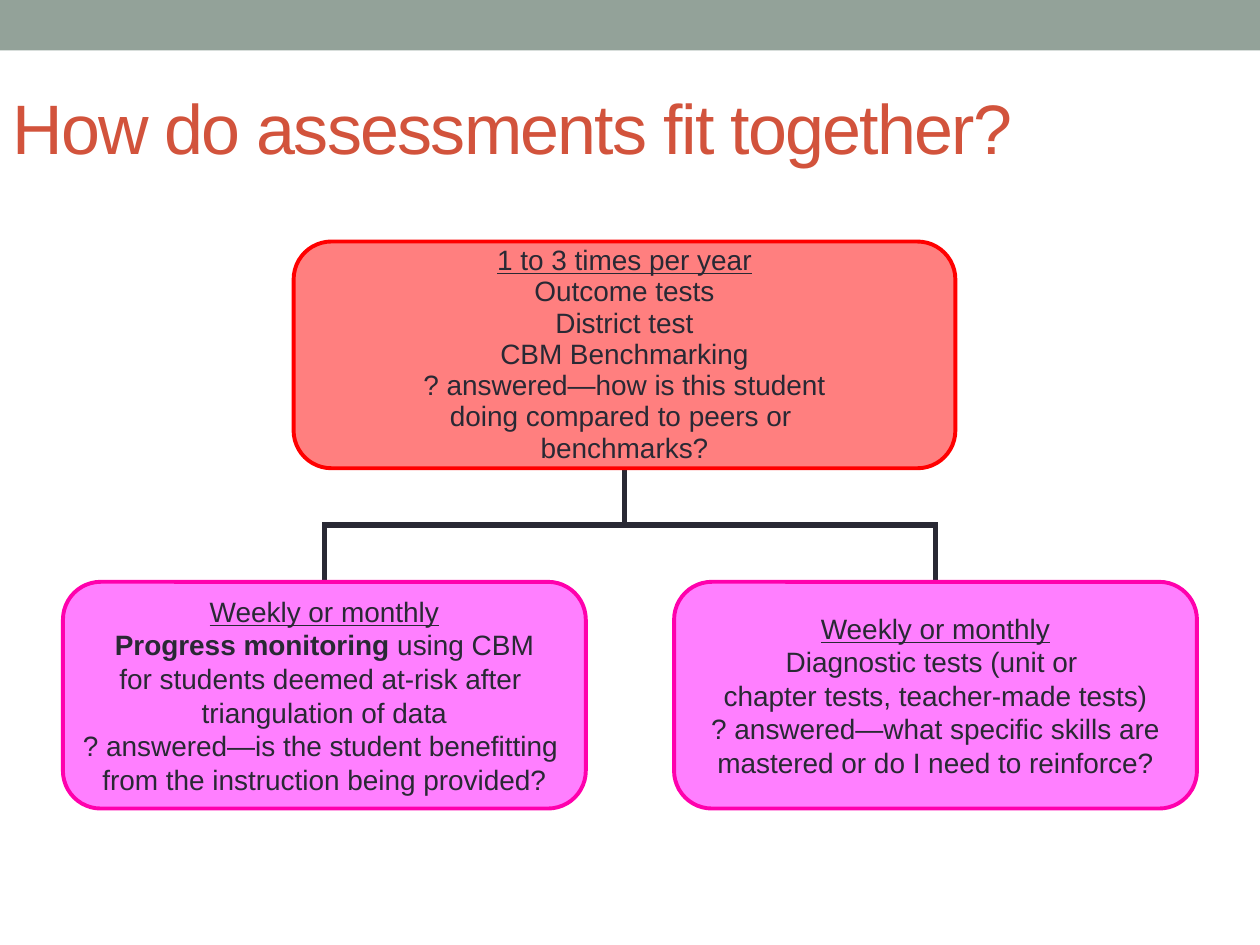
from dataclasses import dataclass

from lxml import etree
from pptx import Presentation
from pptx import util as u
from pptx.dml import color
from pptx.enum import shapes, text
from pptx.oxml import ns


@dataclass(frozen=True)
class Theme:
    font: str = "Arial"
    band: str = "93A299"
    title: str = "D2533C"
    ink: str = "292934"
    yearly_fill: str = "FF0000"
    yearly_line: str = "FF0000"
    monthly_fill: str = "FF00FF"
    monthly_line: str = "FF00AD"
    title_size: int = 40
    body_size: int = 16
    outline: float = 2.25
    connector: float = 3
    tight_spacing: float = 0.93


@dataclass(frozen=True)
class Box:
    left: float
    top: float
    width: float
    height: float

    @property
    def center(self):
        return self.left + self.width / 2

    @property
    def bottom(self):
        return self.top + self.height

    def lengths(self):
        return [u.Cm(v) for v in (self.left, self.top, self.width, self.height)]


THEME = Theme()


def rgb(value):
    return color.RGBColor.from_string(value)


def add_run(paragraph, words, size, ink, bold=False, underline=False, spacing=None):
    run = paragraph.add_run()
    run.text = words
    font = run.font
    font.name, font.size = THEME.font, u.Pt(size)
    font.bold, font.underline = bold, underline
    font.color.rgb = rgb(ink)
    if spacing is not None:
        run._r.get_or_add_rPr().set("spc", str(spacing * 100))


def add_filled_shape(slide, kind, box, fill, line=None, opacity=None):
    shape = slide.shapes.add_shape(kind, *box.lengths())
    shape.shadow.inherit = False
    shape.fill.solid()
    shape.fill.fore_color.rgb = rgb(fill)
    if opacity is not None:
        fill_color = shape._element.spPr.find(".//" + ns.qn("a:srgbClr"))
        etree.SubElement(fill_color, ns.qn("a:alpha")).set("val", str(opacity * 1000))
    if line:
        shape.line.color.rgb = rgb(line)
        shape.line.width = u.Pt(THEME.outline)
    else:
        shape.line.fill.background()
    return shape


def add_title(slide, box, words):
    frame = slide.shapes.add_textbox(*box.lengths()).text_frame
    frame.word_wrap = True
    frame.vertical_anchor = text.MSO_ANCHOR.MIDDLE
    add_run(frame.paragraphs[0], words, THEME.title_size, THEME.title, spacing=-1)


def add_assessment(slide, box, heading, lines, fill, line, line_spacing=None):
    shape = add_filled_shape(
        slide, shapes.MSO_SHAPE.ROUNDED_RECTANGLE, box, fill, line, opacity=50
    )
    frame = shape.text_frame
    frame.word_wrap = False
    frame.vertical_anchor = text.MSO_ANCHOR.MIDDLE
    frame.margin_left = frame.margin_right = frame.margin_top = frame.margin_bottom = 0
    rows = [[(heading, {"underline": True})]]
    rows += [[(row, {})] if isinstance(row, str) else row for row in lines]
    for index, row in enumerate(rows):
        paragraph = frame.add_paragraph() if index else frame.paragraphs[0]
        paragraph.alignment = text.PP_ALIGN.CENTER
        paragraph.line_spacing = line_spacing
        for words, style in row:
            add_run(paragraph, words, THEME.body_size, THEME.ink, **style)


def add_branch(slide, parent, child):
    middle_x = (parent.center + child.center) / 2
    middle_y = (parent.bottom + child.top) / 2
    half_rise = (child.top - parent.bottom) / 2
    half_run = (child.center - parent.center) / 2
    connector = slide.shapes.add_connector(
        shapes.MSO_CONNECTOR.ELBOW,
        u.Cm(middle_x - half_rise), u.Cm(middle_y + half_run),
        u.Cm(middle_x + half_rise), u.Cm(middle_y - half_run),
    )
    connector.line.color.rgb = rgb(THEME.ink)
    connector.line.width = u.Pt(THEME.connector)
    properties = connector._element.spPr
    properties.find(ns.qn("a:xfrm")).set("rot", str(270 * 60000))
    outline = properties.find(ns.qn("a:ln"))
    etree.SubElement(outline, ns.qn("a:miter")).set("lim", "800000")
    etree.SubElement(properties, ns.qn("a:effectLst"))


def add_hierarchy(slide, box):
    card_height = 4.57
    child_width = 10.54
    yearly = Box(box.left + 4.65, box.top, 13.34, card_height)
    child_top = box.bottom - card_height
    progress = Box(box.left, child_top, child_width, card_height)
    diagnostic = Box(
        box.left + box.width - child_width, child_top, child_width, card_height
    )
    for child in (diagnostic, progress):
        add_branch(slide, yearly, child)
    add_assessment(
        slide, yearly, "1 to 3 times per year",
        [
            "Outcome tests",
            "District test",
            "CBM Benchmarking",
            "? answered—how is this student",
            "doing compared to peers or ",
            "benchmarks?",
        ],
        THEME.yearly_fill, THEME.yearly_line, line_spacing=THEME.tight_spacing,
    )
    monthly = {
        progress: [
            [("Progress monitoring", {"bold": True}), (" using CBM", {})],
            "for students deemed at-risk after ",
            "triangulation of data",
            "? answered—is the student benefitting ",
            "from the instruction being provided?",
        ],
        diagnostic: [
            "Diagnostic tests (unit or ",
            "chapter tests, teacher-made tests)",
            "? answered—what specific skills are",
            "mastered or do I need to reinforce?",
        ],
    }
    for card, lines in monthly.items():
        add_assessment(
            slide, card, "Weekly or monthly", lines,
            THEME.monthly_fill, THEME.monthly_line,
        )


def main():
    presentation = Presentation()
    presentation.slide_width, presentation.slide_height = u.Cm(25.4), u.Cm(19.05)
    slide = presentation.slides.add_slide(presentation.slide_layouts[6])
    add_filled_shape(
        slide, shapes.MSO_SHAPE.RECTANGLE, Box(0, 0, 25.4, 1.02), THEME.band
    )
    add_title(slide, Box(0, 0.64, 24.77, 3.81), "How do assessments fit together?")
    add_hierarchy(slide, Box(1.27, 4.87, 22.86, 11.43))
    presentation.save("out.pptx")


if __name__ == "__main__":
    main()
